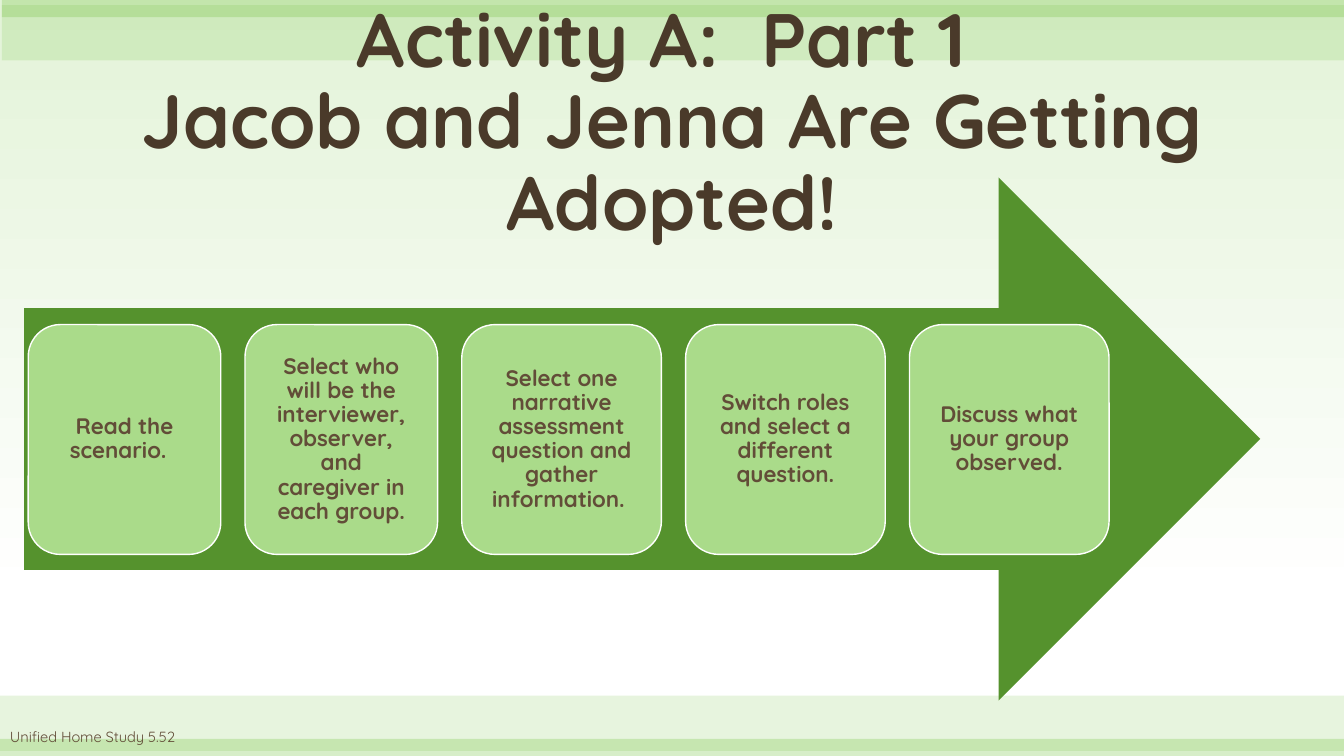
from dataclasses import dataclass

import pptx
import pptx.dml.color
import pptx.enum.shapes
import pptx.enum.text
import pptx.oxml.ns
import pptx.util
from lxml import etree

Inches = pptx.util.Inches
RGB = pptx.dml.color.RGBColor.from_string
Shape = pptx.enum.shapes.MSO_SHAPE
Align = pptx.enum.text.PP_ALIGN
Anchor = pptx.enum.text.MSO_ANCHOR


@dataclass(frozen=True)
class Theme:
    font: str = "Quicksand"
    title_ink: str = "4A3A2A"
    body_ink: str = "624D38"
    band: str = "72C23C"
    arrow: str = "55922D"
    step: str = "AADB8A"
    mint: str = "E3F3D8"
    white: str = "FFFFFF"
    title_size: float = 54
    step_size: float = 16
    footer_size: float = 10.5


theme = Theme()


def add_span(para, text, size, color, bold=False):
    span = para.add_run()
    span.text = text
    span.font.name = theme.font
    span.font.size = pptx.util.Pt(size)
    span.font.bold = bold
    span.font.color.rgb = RGB(color)


def add_filled(kind, left, top, width, height, color):
    """Add a preset shape with a solid fill, no line and no shadow."""
    shape = slide.shapes.add_shape(
        kind, Inches(left), Inches(top), Inches(width), Inches(height))
    shape.shadow.inherit = False
    shape.fill.solid()
    shape.fill.fore_color.rgb = RGB(color)
    shape.line.fill.background()
    return shape


deck = pptx.Presentation()
deck.slide_width, deck.slide_height = Inches(13.33), Inches(7.5)
slide = deck.slides.add_slide(deck.slide_layouts[5])

# Background fading downwards to white
background = slide.background.fill
background.gradient()
background.gradient_angle = 270
for stop, position, color in zip(
        background.gradient_stops, (0, 0.79), (theme.mint, theme.white)):
    stop.position = position
    stop.color.rgb = RGB(color)

# Translucent bands along the bottom and top edges
for left, top, height, opacity in (
        (0, 6.9, 0.55, 17), (0, 7.33, 0.17, 28),
        (0.02, 0.05, 0.55, 17), (0.02, 0, 0.17, 28)):
    band = add_filled(Shape.RECTANGLE, left, top, 13.33, height, theme.band)
    band_color = band.element.spPr.find(".//" + pptx.oxml.ns.qn("a:srgbClr"))
    etree.SubElement(band_color, pptx.oxml.ns.qn("a:alpha"), val=str(opacity * 1000))

# Title, brought in front of the bands
title = slide.shapes.title
title.element.getparent().append(title.element)
title.left, title.top = Inches(0), Inches(0.1)
title.width, title.height = Inches(13.33), Inches(2.4)
title.text_frame.auto_size = pptx.enum.text.MSO_AUTO_SIZE.NONE
title.text_frame.word_wrap = True
title.text_frame.vertical_anchor = Anchor.BOTTOM
para = title.text_frame.paragraphs[0]
para.alignment = Align.CENTER
para.line_spacing = 0.9
add_span(para, "Activity A:  Part 1 ", theme.title_size, theme.title_ink, True)
para.add_line_break()
add_span(para, "Jacob and Jenna Are Getting Adopted!",
         theme.title_size, theme.title_ink, True)

# Process arrow with its steps
add_filled(Shape.RIGHT_ARROW, 0.24, 1.76, 12.26, 5.19, theme.arrow)

step_gap = 0.24
step_left = 0.28
for width, text in (
        (1.91, "Read the scenario.  "),
        (1.91, "Select who will be the interviewer, observer, and caregiver in each group."),
        (1.98, "Select one narrative assessment question and gather information.  "),
        (1.98, "Switch roles and select a different question."),
        (1.98, "Discuss what your group observed.")):
    step = add_filled(Shape.ROUNDED_RECTANGLE, step_left, 3.22, width, 2.28, theme.step)
    step.line.color.rgb = RGB(theme.white)
    step.line.width = pptx.util.Pt(1)
    frame = step.text_frame
    frame.word_wrap = True
    frame.vertical_anchor = Anchor.MIDDLE
    frame.margin_left = frame.margin_right = Inches(0.18)
    frame.margin_top = frame.margin_bottom = Inches(0.18)
    para = frame.paragraphs[0]
    para.alignment = Align.CENTER
    para.line_spacing = 0.9
    add_span(para, text, theme.step_size, theme.body_ink, True)
    step_left += width + step_gap

# Footer
box = slide.shapes.add_textbox(Inches(0), Inches(7.17), Inches(2.99), Inches(0.33))
box.text_frame.word_wrap = True
add_span(box.text_frame.paragraphs[0], "Unified Home Study 5.52",
         theme.footer_size, theme.body_ink)

deck.save("out.pptx")
